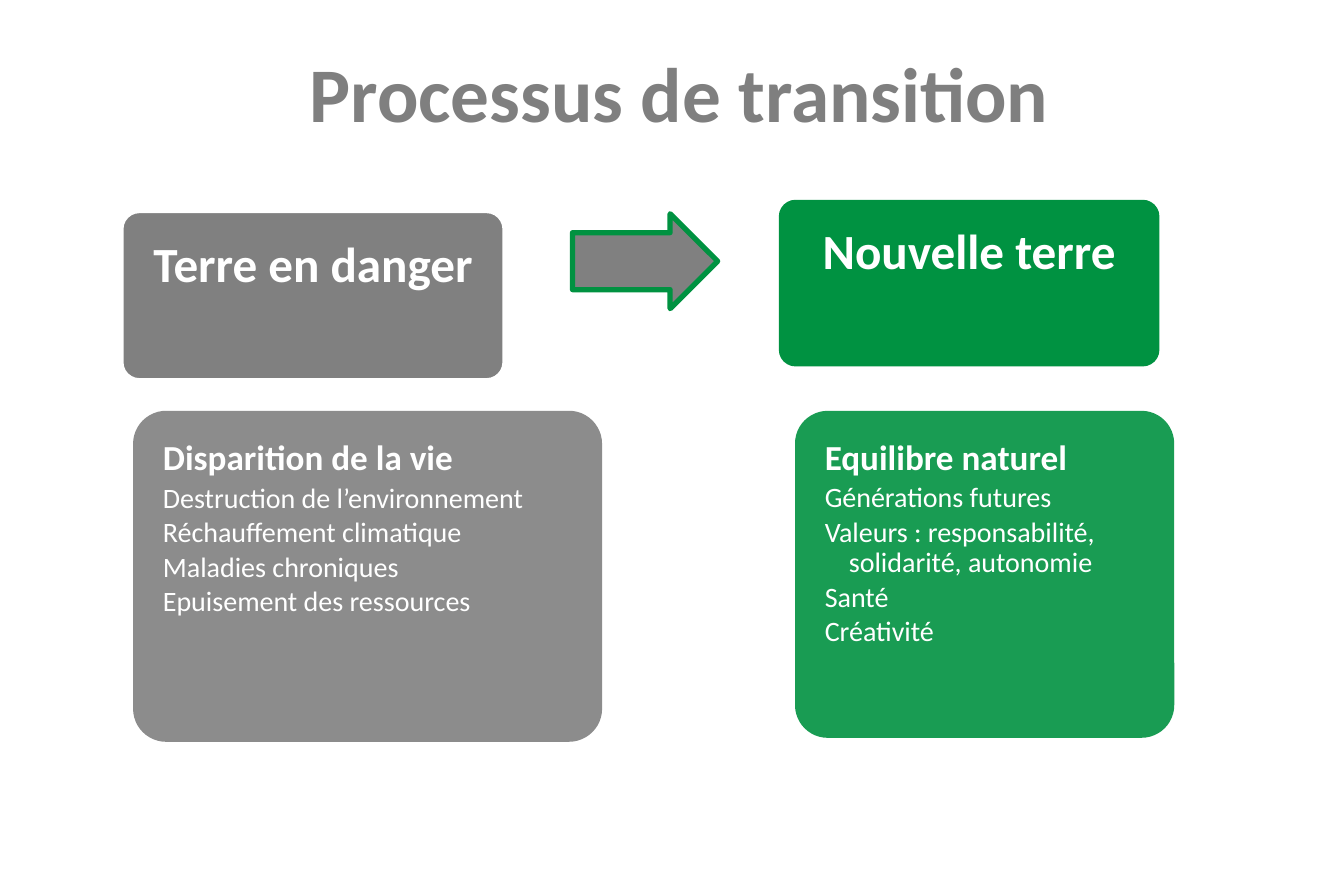
from dataclasses import dataclass

from lxml import etree
from pptx import Presentation
from pptx.dml.color import RGBColor
from pptx.enum.shapes import MSO_SHAPE
from pptx.enum.text import MSO_ANCHOR, PP_ALIGN
from pptx.oxml.ns import qn
from pptx.util import Inches, Pt

ROUNDED = MSO_SHAPE.ROUNDED_RECTANGLE
ARROW = MSO_SHAPE.RIGHT_ARROW
TOP = MSO_ANCHOR.TOP
CENTER, LEFT = PP_ALIGN.CENTER, PP_ALIGN.LEFT
WIDTH, HEIGHT = Inches(10.63), Inches(7.09)
COLUMNS = ROWS = 100


@dataclass(frozen=True)
class Theme:
    font: str = "Calibri"
    title_grey: RGBColor = RGBColor(0x7F, 0x7F, 0x7F)
    grey: RGBColor = RGBColor(0x80, 0x80, 0x80)
    green: RGBColor = RGBColor(0x00, 0x92, 0x41)
    white: RGBColor = RGBColor(0xFF, 0xFF, 0xFF)
    title_size: int = 44
    heading_size: int = 28
    lead_size: int = 20
    item_size: int = 16


THEME = Theme()

# Each stage: colour, outlined heading, heading area, panel area, heading, lead, items.
# Areas are left, top, width and height in grid columns and rows.
STAGES = [
    (THEME.grey, True, (9.13, 23.7, 28.32, 18.6), (9.9, 45.85, 34.9, 36.95),
     "Terre en danger", "Disparition de la vie",
     ["Destruction de l’environnement", "Réchauffement climatique",
      "Maladies chroniques", "Epuisement des ressources"]),
    (THEME.green, False, (57.95, 22.3, 28.32, 18.6), (59.15, 45.85, 28.22, 36.5),
     "Nouvelle terre", "Equilibre naturel",
     ["Générations futures", "Valeurs : responsabilité, solidarité, autonomie",
      "Santé", "Créativité"]),
]
TITLE_AREA = (1.13, 4.4, 98.87, 11.85)
ARROW_AREA = (42.6, 23.85, 10.8, 10.6)


def grid(area):
    """Turn grid columns and rows into slide lengths."""
    left, top, width, height = area
    return (int(left * WIDTH / COLUMNS), int(top * HEIGHT / ROWS),
            int(width * WIDTH / COLUMNS), int(height * HEIGHT / ROWS))


def add_block(page, kind, area, color, adjustments, opacity=100):
    block = page.shapes.add_shape(kind, *grid(area))
    block.shadow.inherit = False
    for index, value in enumerate(adjustments):
        block.adjustments[index] = value
    block.fill.solid()
    block.fill.fore_color.rgb = color
    if opacity < 100:
        tint = block.element.spPr.find(qn("a:solidFill"))[0]
        etree.SubElement(tint, qn("a:alpha")).set("val", str(opacity * 1000))
    block.line.fill.background()
    return block


def outline(block, color, width):
    block.line.color.rgb = color
    block.line.width = Pt(width)


def prepare_frame(box, inset, bottom):
    frame = box.text_frame
    frame.word_wrap = True
    frame.vertical_anchor = TOP
    frame.margin_left = frame.margin_right = frame.margin_top = Inches(inset)
    frame.margin_bottom = Inches(bottom)
    return frame


def write(para, text, size, color, bold=True, align=CENTER):
    para.text = text
    para.alignment = align
    font = para.font
    font.name, font.size, font.bold = THEME.font, Pt(size), bold
    font.color.rgb = color


def tighten(para, size, gap):
    """Set close lines, with a gap after given as a share of the type size."""
    para.line_spacing = 0.9
    para.space_after = Pt(round(size * gap, 1))


def hang(para, indent):
    properties = para._p.get_or_add_pPr()
    properties.set("marL", str(Inches(indent)))
    properties.set("indent", str(-Inches(indent)))


def add_title(page, text):
    box = page.shapes.add_textbox(*grid(TITLE_AREA))
    frame = prepare_frame(box, 0.05, 0.05)
    write(frame.paragraphs[0], text, THEME.title_size, THEME.title_grey)


def add_heading(page, area, color, outlined, text):
    block = add_block(page, ROUNDED, area, color, [0.1])
    if outlined:
        outline(block, THEME.white, 1)
    para = prepare_frame(block, 0.18, 0.12).paragraphs[0]
    write(para, text, THEME.heading_size, THEME.white)
    tighten(para, THEME.heading_size, 0.35)


def add_panel(page, area, color, lead, items):
    block = add_block(page, ROUNDED, area, color, [0.1], opacity=90)
    frame = prepare_frame(block, 0.16, 0.16)
    for index, text in enumerate([lead, *items]):
        is_lead = index == 0
        para = frame.paragraphs[0] if is_lead else frame.add_paragraph()
        size = THEME.lead_size if is_lead else THEME.item_size
        hang(para, 0.25 if is_lead else 0.19)
        write(para, text, size, THEME.white, bold=is_lead, align=LEFT)
        tighten(para, size, 0.15)


def main():
    deck = Presentation()
    deck.slide_width, deck.slide_height = WIDTH, HEIGHT
    page = deck.slides.add_slide(deck.slide_layouts[6])
    add_title(page, "Processus de transition")
    for color, outlined, heading_area, panel_area, heading, lead, items in STAGES:
        add_heading(page, heading_area, color, outlined, heading)
        add_panel(page, panel_area, color, lead, items)
    arrow = add_block(page, ARROW, ARROW_AREA, THEME.grey, [0.6, 0.5])
    outline(arrow, THEME.green, 3)
    deck.save("out.pptx")


if __name__ == "__main__":
    main()
